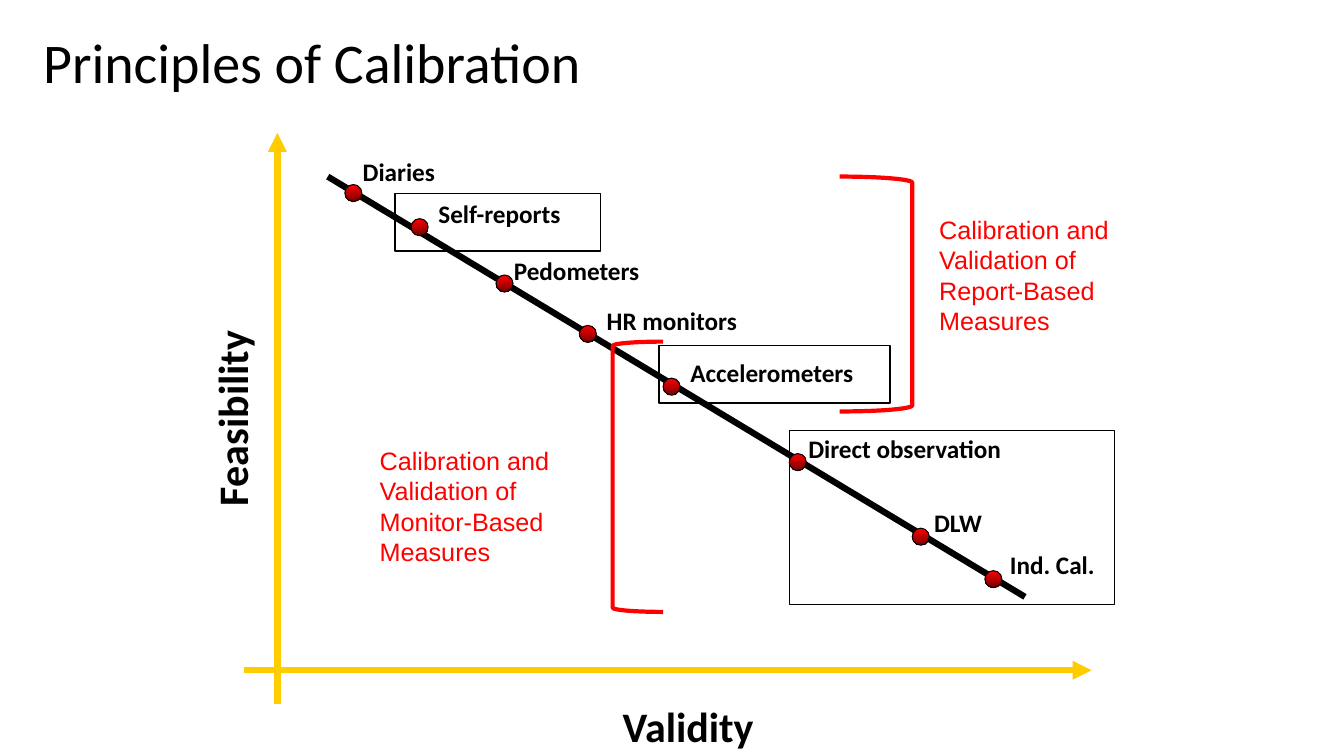
from lxml.etree import SubElement
from pptx import Presentation
from pptx.dml.color import RGBColor
from pptx.enum.shapes import MSO_CONNECTOR, MSO_SHAPE
from pptx.enum.text import MSO_ANCHOR, PP_ALIGN
from pptx.oxml.ns import qn
from pptx.util import Cm, Pt

BLACK = RGBColor(0x00, 0x00, 0x00)
RED = RGBColor(0xFF, 0x00, 0x00)
DARK_RED = RGBColor(0x76, 0x00, 0x00)
GOLD = RGBColor(0xFF, 0xCC, 0x00)

DOT_SIZE = 0.43
LABEL_HEIGHT = 1.02

METHODS = [
    ("Diaries", (8.69, 4.65), (8.89, 3.81), 3.61),
    ("Self-reports", (10.36, 5.51), (10.8, 4.88), 4.88),
    ("Pedometers", (12.5, 6.93), (12.7, 6.3), 4.88),
    ("HR monitors", (14.6, 8.2), (15.04, 7.57), 5.51),
    ("Accelerometers", (16.71, 9.53), (17.15, 8.89), 6.99),
    ("Direct observation", (19.89, 11.43), (20.12, 10.8), 8.46),
    ("DLW", (22.99, 13.31), (23.29, 12.65), 5.72),
    ("Ind. Cal.", (24.82, 14.38), (25.2, 13.72), 3.81),
]

HIGHLIGHTS = [
    (9.96, 4.88, 5.18, 1.45),
    (16.61, 8.71, 5.82, 1.45),
    (19.89, 10.85, 8.2, 4.39),
]


class SlideBuilder:
    """Draws the elements of one slide in a shared style."""

    def __init__(self, slide, font="Calibri"):
        self.s = slide
        self.font = font

    def text(self, text, x, y, w, h, size=18, bold=True, color=BLACK,
             font=None, align=PP_ALIGN.LEFT, anchor=MSO_ANCHOR.TOP):
        sp = self.s.shapes.add_textbox(Cm(x), Cm(y), Cm(w), Cm(h))
        tf = sp.text_frame
        tf.word_wrap = True
        tf.vertical_anchor = anchor
        tf.text = text
        p = tf.paragraphs[0]
        p.alignment = align
        for r in p.runs:
            r.font.name = font or self.font
            r.font.size = Pt(size)
            r.font.bold = bold
            r.font.color.rgb = color
        return sp

    def line(self, x1, y1, x2, y2, color, arrow=False):
        sp = self.s.shapes.add_connector(
            MSO_CONNECTOR.STRAIGHT, Cm(x1), Cm(y1), Cm(x2), Cm(y2))
        sp.line.color.rgb = color
        sp.line.width = Pt(4.5)
        if arrow:
            SubElement(sp.line._get_or_add_ln(), qn("a:tailEnd"), type="triangle")
        SubElement(sp._element.spPr, qn("a:effectLst"))

    def outline(self, kind, x, y, w, h, color=BLACK, width=1):
        sp = self.s.shapes.add_shape(kind, Cm(x), Cm(y), Cm(w), Cm(h))
        sp.shadow.inherit = False
        sp.fill.background()
        sp.line.color.rgb = color
        sp.line.width = Pt(width)
        return sp

    def dot(self, x, y):
        sp = self.outline(MSO_SHAPE.OVAL, x, y, DOT_SIZE, DOT_SIZE, width=0.75)
        sp.fill.gradient()
        sp.fill.gradient_angle = 270
        for stop, color in zip(sp.fill.gradient_stops, (RED, DARK_RED)):
            stop.color.rgb = color

    def note(self, text, x, y, w):
        self.text(text, x, y, w, 3.33, bold=False, color=RED, font="Arial")


def main():
    prs = Presentation()
    prs.slide_width, prs.slide_height = Cm(33.87), Cm(19.05)
    b = SlideBuilder(prs.slides.add_slide(prs.slide_layouts[6]))

    title = b.text("Principles of Calibration", 0.84, 0.05, 21.59, 3.18, size=40,
                   bold=False, anchor=MSO_ANCHOR.MIDDLE)
    title.text_frame.paragraphs[0].line_spacing = 0.9

    b.text("Validity", 7.82, 17.53, 19.05, 1.52, size=30, align=PP_ALIGN.CENTER)
    feasibility = b.text("Feasibility", 1.6, 9.78, 8.46, 1.52, size=30,
                         align=PP_ALIGN.CENTER)
    feasibility.rotation = 270

    b.line(8.26, 4.45, 25.83, 15.04, BLACK)
    for label, dot, corner, width in METHODS:
        b.text(label, *corner, width, LABEL_HEIGHT)
        b.dot(*dot)

    b.line(6.15, 16.89, 27.51, 16.89, GOLD, arrow=True)
    b.line(6.99, 17.73, 6.99, 3.35, GOLD, arrow=True)

    for box in HIGHLIGHTS:
        b.outline(MSO_SHAPE.RECTANGLE, *box)

    b.note("Calibration and Validation of Monitor-Based Measures", 9.32, 11.1, 5.72)
    b.outline(MSO_SHAPE.LEFT_BRACKET, 15.44, 8.61, 1.27, 6.81, RED, 3)
    b.outline(MSO_SHAPE.RIGHT_BRACKET, 21.16, 4.45, 1.83, 5.92, RED, 3)
    b.note("Calibration and Validation of Report-Based Measures", 23.42, 5.28, 5.99)

    prs.save("out.pptx")


if __name__ == "__main__":
    main()
